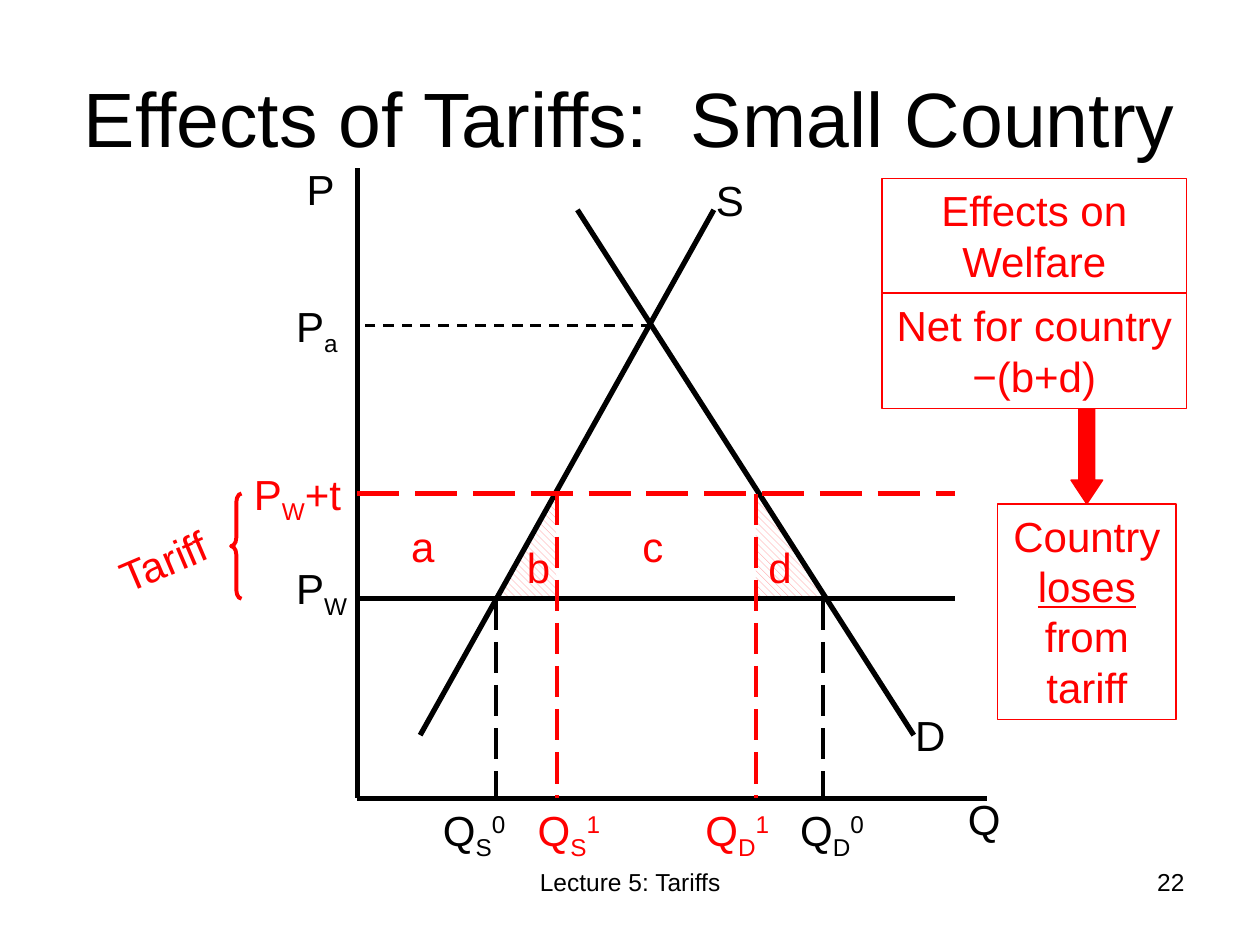
from dataclasses import dataclass

from lxml.etree import SubElement
from pptx import Presentation
from pptx.dml.color import RGBColor
from pptx.enum.dml import MSO_LINE, MSO_PATTERN
from pptx.enum.shapes import MSO_CONNECTOR, MSO_SHAPE
from pptx.enum.text import MSO_ANCHOR, MSO_AUTO_SIZE, PP_ALIGN
from pptx.oxml.ns import qn
from pptx.util import Cm, Pt

BLACK, RED, PINK, WHITE = "000000", "FF0000", "FF7C80", "FFFFFF"
SUB, SUP = -25, 30

# Prices (y) and quantities (x) of the diagram, in cm
P_TOP, P_AUTARKY, P_TARIFF, P_WORLD, Q_AXIS = 3.39, 6.56, 9.95, 12.07, 16.09
P_AXIS, QS0, QS1, QD1, QD0, Q_END = 7.2, 10, 11.22, 15.24, 16.59, 19.9
CURVE_TOP, CURVE_BOTTOM, PRICE_END = 4.23, 14.82, 19.26
QUANTITY_LABEL_WIDTH = 2.12


@dataclass
class Piece:
    """A run of text with its baseline shift in percent."""
    text: str
    baseline: int = 0
    underline: bool = False


@dataclass
class Label:
    pieces: list[Piece]
    left: float
    top: float
    width: float = 1.48
    color: str = BLACK
    rotation: float = 0


@dataclass
class Segment:
    start: tuple[float, float]
    end: tuple[float, float]
    color: str = BLACK
    weight: float = 3
    dash: MSO_LINE | None = None


@dataclass
class Box:
    pieces: list[Piece]
    left: float
    top: float
    width: float
    height: float


def rgb(color: str) -> RGBColor:
    return RGBColor.from_string(color)


def write(frame, pieces: list[Piece], color: str, size: float = 24,
          align: PP_ALIGN = PP_ALIGN.LEFT) -> None:
    frame.word_wrap = True
    frame.auto_size = MSO_AUTO_SIZE.NONE
    paragraph = frame.paragraphs[0]
    paragraph.alignment = align
    for piece in pieces:
        run = paragraph.add_run()
        run.text = piece.text
        run.font.name = "Arial"
        run.font.size = Pt(size)
        run.font.color.rgb = rgb(color)
        if piece.underline:
            run.font.underline = True
        if piece.baseline:
            run.font._element.set("baseline", str(piece.baseline * 1000))


def draw_label(slide, label: Label) -> None:
    textbox = slide.shapes.add_textbox(
        Cm(label.left), Cm(label.top), Cm(label.width), Cm(1.27))
    textbox.rotation = label.rotation
    write(textbox.text_frame, label.pieces, label.color)


def draw_segment(slide, segment: Segment) -> None:
    line = slide.shapes.add_connector(
        MSO_CONNECTOR.STRAIGHT, *map(Cm, segment.start + segment.end))
    line.line.color.rgb = rgb(segment.color)
    line.line.width = Pt(segment.weight)
    if segment.dash is not None:
        line.line.dash_style = segment.dash
    SubElement(line._element.spPr, qn("a:effectLst"))


def draw_loss_area(slide, corners: list[tuple[float, float]]) -> None:
    first, *others = [(Cm(x), Cm(y)) for x, y in corners]
    builder = slide.shapes.build_freeform(*first)
    builder.add_line_segments(others, close=True)
    area = builder.convert_to_shape()
    area.shadow.inherit = False
    area.fill.patterned()
    area.fill.pattern = MSO_PATTERN.WIDE_DOWNWARD_DIAGONAL
    area.fill.fore_color.rgb = rgb(PINK)
    area.fill.back_color.rgb = rgb(WHITE)
    area.line.fill.background()


def draw_red_shape(slide, kind: MSO_SHAPE, left: float, top: float, width: float,
                   height: float, weight: float = 0.75, filled: bool = False):
    shape = slide.shapes.add_shape(kind, Cm(left), Cm(top), Cm(width), Cm(height))
    shape.shadow.inherit = False
    if filled:
        shape.fill.solid()
        shape.fill.fore_color.rgb = rgb(RED)
    else:
        shape.fill.background()
    shape.line.color.rgb = rgb(RED)
    shape.line.width = Pt(weight)
    return shape


def draw_box(slide, box: Box) -> None:
    shape = draw_red_shape(slide, MSO_SHAPE.RECTANGLE,
                           box.left, box.top, box.width, box.height)
    shape.text_frame.vertical_anchor = MSO_ANCHOR.TOP
    write(shape.text_frame, box.pieces, RED, align=PP_ALIGN.CENTER)


def draw_footer(slide, text: str, left: float, width: float, align: PP_ALIGN) -> None:
    footer = slide.shapes.add_textbox(Cm(left), Cm(17.36), Cm(width), Cm(1.32))
    write(footer.text_frame, [Piece(text)], BLACK, 14, align)


def quantity_label(curve: str, period: str, left: float, color: str) -> Label:
    return Label([Piece("Q"), Piece(curve, SUB), Piece(period, SUP)],
                 left, Q_AXIS, QUANTITY_LABEL_WIDTH, color)


SEGMENTS = [
    # Axes
    Segment((P_AXIS, P_TOP), (P_AXIS, Q_AXIS)),
    Segment((P_AXIS, Q_AXIS), (Q_END, Q_AXIS)),
    # Supply and demand
    Segment((14.39, CURVE_TOP), (8.47, CURVE_BOTTOM)),
    Segment((11.64, CURVE_TOP), (18.42, CURVE_BOTTOM)),
    # Prices
    Segment((13.13, P_AUTARKY), (P_AXIS, P_AUTARKY), weight=1.5, dash=MSO_LINE.DASH),
    Segment((P_AXIS, P_WORLD), (PRICE_END, P_WORLD)),
    Segment((P_AXIS, P_TARIFF), (PRICE_END, P_TARIFF), RED, dash=MSO_LINE.LONG_DASH),
] + [
    # Quantities before and after the tariff
    Segment((quantity, price), (quantity, Q_AXIS), color, 2.25, MSO_LINE.LONG_DASH)
    for quantity, price, color in [(QS0, P_WORLD, BLACK), (QD0, P_WORLD, BLACK),
                                   (QS1, P_TARIFF, RED), (QD1, P_TARIFF, RED)]
]

LABELS = [
    Label([Piece("S")], 14.18, 3.39),
    Label([Piece("D")], 18.2, 14.18),
    Label([Piece("P")], 5.93, 3.18),
    Label([Piece("Q")], PRICE_END, 15.88),
    Label([Piece("P"), Piece("a", SUB)], 5.72, 5.93, 2.33),
    Label([Piece("P"), Piece("W", SUB)], 5.72, 11.22, 1.7),
    Label([Piece("P"), Piece("W", SUB), Piece("+t")], 4.87, 9.31, 2.75, RED),
    Label([Piece("Tariff")], 2.12, 10.58, 2.75, RED, 336.8),
    quantity_label("S", "0", 8.68, BLACK),
    quantity_label("S", "1", 10.59, RED),
    quantity_label("D", "1", 13.97, RED),
    quantity_label("D", "0", 15.88, BLACK),
] + [
    Label([Piece(area)], left, top, color=RED)
    for area, left, top in [("a", 8.04, 10.37), ("b", 10.37, 10.79),
                            ("c", 12.7, 10.37), ("d", 15.24, 10.79)]
]

BOXES = [
    Box([Piece("Effects on Welfare")], 17.78, 3.6, 6.14, 2.31),
    Box([Piece("Net for country −(b+d)")], 17.78, 5.92, 6.14, 2.31),
    Box([Piece("Country "), Piece("loses", underline=True), Piece(" from tariff")],
        20.11, 10.16, 3.6, 4.34),
]


def main() -> None:
    presentation = Presentation()
    presentation.slide_width, presentation.slide_height = Cm(25.4), Cm(19.05)
    slide = presentation.slides.add_slide(presentation.slide_layouts[5])

    # Title and footer
    title = slide.shapes.title
    title.left, title.top, title.width, title.height = map(Cm, (1.27, 0.76, 22.86, 3.18))
    title.text_frame.vertical_anchor = MSO_ANCHOR.MIDDLE
    write(title.text_frame, [Piece("Effects of Tariffs:  Small Country")], BLACK, 44,
          PP_ALIGN.CENTER)
    draw_footer(slide, "Lecture 5: Tariffs", 8.68, 8.05, PP_ALIGN.CENTER)
    draw_footer(slide, "22", 18.21, 5.92, PP_ALIGN.RIGHT)

    # Diagram
    draw_loss_area(slide, [(QS1, P_TARIFF), (QS1, P_WORLD), (QS0, P_WORLD)])
    draw_loss_area(slide, [(QD1, P_TARIFF), (QD1, P_WORLD), (QD0, P_WORLD)])
    for segment in SEGMENTS:
        draw_segment(slide, segment)
    for label in LABELS:
        draw_label(slide, label)
    brace = draw_red_shape(slide, MSO_SHAPE.LEFT_BRACE, 4.66, P_TARIFF, 0.21,
                           P_WORLD - P_TARIFF, 2.25)
    brace.adjustments[0] = 0.83

    # Welfare conclusion
    for box in BOXES:
        draw_box(slide, box)
    arrow = draw_red_shape(slide, MSO_SHAPE.DOWN_ARROW, 21.59, 8.25, 0.64, 1.91,
                           filled=True)
    arrow.adjustments[0], arrow.adjustments[1] = 0.5, 0.75

    presentation.save("out.pptx")


if __name__ == "__main__":
    main()
